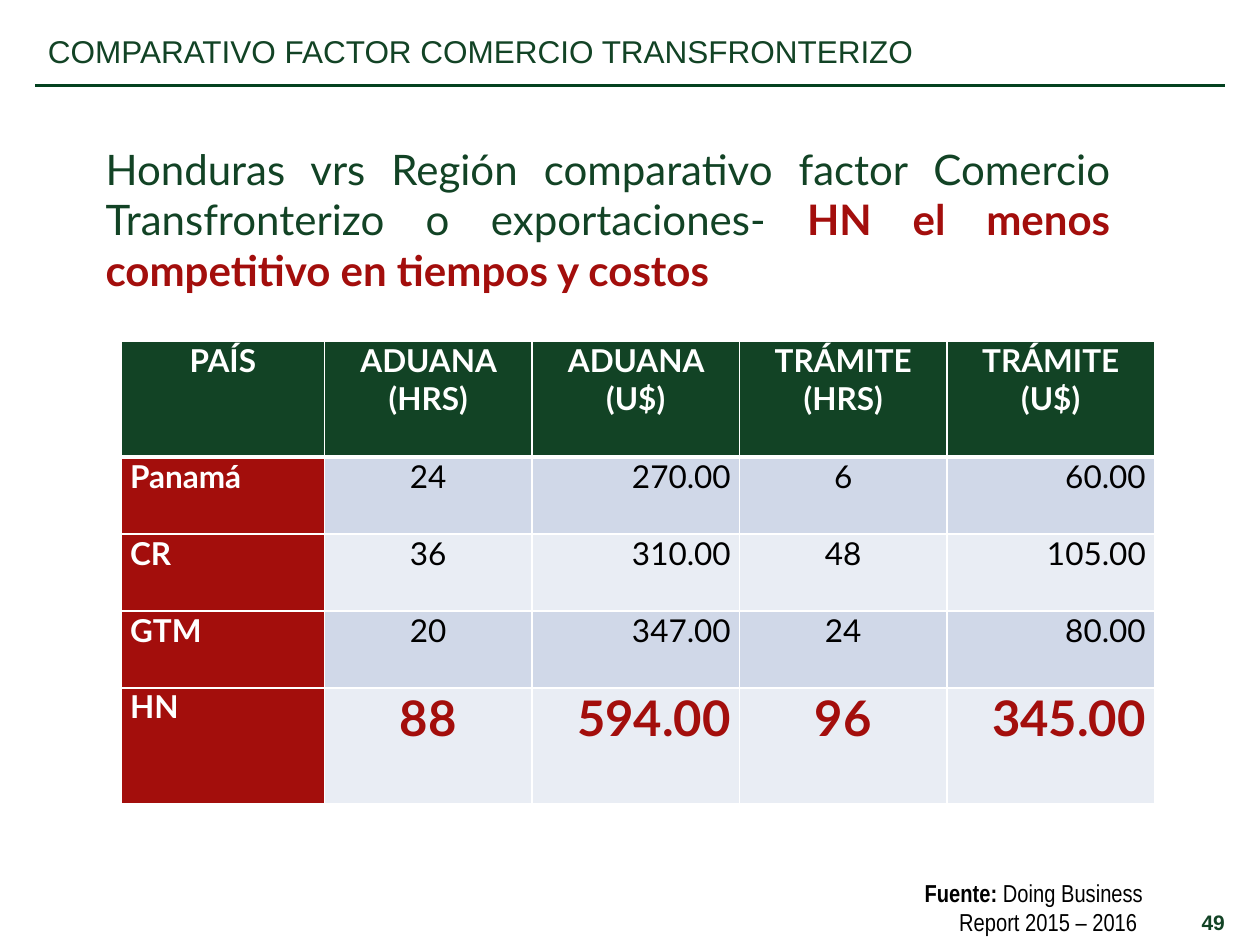
from dataclasses import dataclass

from lxml import etree
from pptx import Presentation
from pptx.dml.color import RGBColor
from pptx.enum.shapes import MSO_CONNECTOR
from pptx.enum.text import MSO_ANCHOR, MSO_AUTO_SIZE, PP_ALIGN
from pptx.oxml.ns import qn
from pptx.util import Pt

LEFT, CENTER, RIGHT, JUSTIFY = PP_ALIGN.LEFT, PP_ALIGN.CENTER, PP_ALIGN.RIGHT, PP_ALIGN.JUSTIFY
TOP, MIDDLE = MSO_ANCHOR.TOP, MSO_ANCHOR.MIDDLE
NO_AUTOFIT = MSO_AUTO_SIZE.NONE
STRAIGHT = MSO_CONNECTOR.STRAIGHT


@dataclass(frozen=True)
class Theme:
    green: str = "124325"
    rule: str = "03411F"
    red: str = "A30E0C"
    white: str = "FFFFFF"
    black: str = "000000"
    bands: tuple[str, str] = ("D0D8E8", "E9EDF4")
    heading_font: str = "Arial"
    body_font: str = "Lato"
    source_font: str = "Arial Narrow"
    heading_size: float = 18
    statement_size: float = 24
    table_size: float = 18
    highlight_size: float = 28
    source_size: float = 14
    number_size: float = 12


@dataclass(frozen=True)
class Box:
    left: float
    top: float
    width: float
    height: float

    def lengths(self) -> tuple[Pt, Pt, Pt, Pt]:
        return Pt(self.left), Pt(self.top), Pt(self.width), Pt(self.height)


@dataclass(frozen=True)
class Country:
    name: str
    values: tuple[str, str, str, str]
    highlighted: bool = False


THEME = Theme()
HEADERS = ("PAÍS", "ADUANA (HRS)", "ADUANA (U$)", "TRÁMITE (HRS)", "TRÁMITE (U$)")
COUNTRIES = (
    Country("Panamá", ("24", "270.00", "6", "60.00")),
    Country("CR", ("36", "310.00", "48", "105.00")),
    Country("GTM", ("20", "347.00", "24", "80.00")),
    Country("HN", ("88", "594.00", "96", "345.00"), highlighted=True),
)
COLUMN_WIDTHS = (116, 118.6, 118.6, 118.6, 118.6)
ROW_HEIGHTS = (66, 44, 44, 44, 66)
VALUE_ALIGNMENTS = (CENTER, RIGHT, CENTER, RIGHT)


def add_run(paragraph, text: str, *, font: str, size: float, color: str, bold: bool = False) -> None:
    run = paragraph.add_run()
    run.text = text
    run.font.name = font
    run.font.size = Pt(size)
    run.font.bold = bold
    run.font.color.rgb = RGBColor.from_string(color)


def add_text_box(slide, box: Box, alignment, anchor=TOP):
    frame = slide.shapes.add_textbox(*box.lengths()).text_frame
    frame.word_wrap = True
    frame.vertical_anchor = anchor
    paragraph = frame.paragraphs[0]
    paragraph.alignment = alignment
    return paragraph


def add_title(slide, text: str) -> None:
    title = slide.shapes.title
    title.left, title.top, title.width, title.height = Box(20.2, 15.1, 612.7, 27.4).lengths()
    frame = title.text_frame
    frame.auto_size = NO_AUTOFIT
    frame.vertical_anchor = MIDDLE
    paragraph = frame.paragraphs[0]
    paragraph.alignment = LEFT
    add_run(paragraph, text, font=THEME.heading_font, size=THEME.heading_size, color=THEME.green)


def add_rule(slide) -> None:
    rule = slide.shapes.add_connector(STRAIGHT, Pt(20.2), Pt(49), Pt(699.8), Pt(49))
    rule.line.color.rgb = RGBColor.from_string(THEME.rule)
    rule.line.width = Pt(2)
    etree.SubElement(rule._element.spPr, qn("a:effectLst"))


def add_borders(cell, bottom_width: float) -> None:
    properties = cell._tc.get_or_add_tcPr()
    widths = {"a:lnL": 1, "a:lnR": 1, "a:lnT": 1, "a:lnB": bottom_width}
    for position, (tag, width) in enumerate(widths.items()):
        line = etree.Element(qn(tag), w=str(Pt(width)))
        fill = etree.SubElement(line, qn("a:solidFill"))
        etree.SubElement(fill, qn("a:srgbClr"), val=THEME.white)
        properties.insert(position, line)


def fill_cell(cell, text: str, *, fill: str, color: str, alignment,
              size: float = THEME.table_size, bold: bool = False, bottom_width: float = 1) -> None:
    cell.margin_left = cell.margin_right = Pt(5)
    cell.margin_top = cell.margin_bottom = 0
    cell.vertical_anchor = TOP
    cell.fill.solid()
    cell.fill.fore_color.rgb = RGBColor.from_string(fill)
    add_borders(cell, bottom_width)
    paragraph = cell.text_frame.paragraphs[0]
    paragraph.alignment = alignment
    add_run(paragraph, text, font=THEME.body_font, size=size, color=color, bold=bold)


def add_comparison_table(slide) -> None:
    box = Box(69.4, 195.1, sum(COLUMN_WIDTHS), sum(ROW_HEIGHTS))
    table = slide.shapes.add_table(len(ROW_HEIGHTS), len(COLUMN_WIDTHS), *box.lengths()).table
    for column, width in zip(table.columns, COLUMN_WIDTHS):
        column.width = Pt(width)
    for row, height in zip(table.rows, ROW_HEIGHTS):
        row.height = Pt(height)
    for column_index, header in enumerate(HEADERS):
        fill_cell(table.cell(0, column_index), header, fill=THEME.green, color=THEME.white,
                  alignment=CENTER, bold=True, bottom_width=3)
    for row_index, country in enumerate(COUNTRIES, start=1):
        fill_cell(table.cell(row_index, 0), country.name, fill=THEME.red, color=THEME.white,
                  alignment=LEFT, bold=True)
        band = THEME.bands[(row_index - 1) % 2]
        color = THEME.red if country.highlighted else THEME.black
        size = THEME.highlight_size if country.highlighted else THEME.table_size
        for column_index, (value, alignment) in enumerate(zip(country.values, VALUE_ALIGNMENTS), start=1):
            fill_cell(table.cell(row_index, column_index), value, fill=band, color=color,
                      alignment=alignment, size=size, bold=country.highlighted)


def add_statement(slide) -> None:
    paragraph = add_text_box(slide, Box(53.3, 78.5, 588.2, 94.3), JUSTIFY)
    add_run(paragraph, "Honduras vrs Región comparativo factor Comercio Transfronterizo o exportaciones- ",
            font=THEME.body_font, size=THEME.statement_size, color=THEME.green)
    add_run(paragraph, "HN el menos competitivo en tiempos y costos",
            font=THEME.body_font, size=THEME.statement_size, color=THEME.red, bold=True)


def add_source(slide) -> None:
    paragraph = add_text_box(slide, Box(507.6, 498.2, 152.6, 41), RIGHT)
    add_run(paragraph, "Fuente: ", font=THEME.source_font, size=THEME.source_size,
            color=THEME.black, bold=True)
    add_run(paragraph, "Doing Business Report 2015 – 2016 ", font=THEME.source_font,
            size=THEME.source_size, color=THEME.black)


def add_page_number(slide, number: str) -> None:
    paragraph = add_text_box(slide, Box(659.5, 518.4, 47.5, 17.3), RIGHT, MIDDLE)
    add_run(paragraph, number, font=THEME.heading_font, size=THEME.number_size,
            color=THEME.green, bold=True)


def main() -> None:
    presentation = Presentation()
    presentation.slide_width, presentation.slide_height = Pt(720), Pt(540)
    slide = presentation.slides.add_slide(presentation.slide_layouts[5])
    add_rule(slide)
    add_title(slide, "COMPARATIVO FACTOR COMERCIO TRANSFRONTERIZO")
    add_page_number(slide, "49")
    add_statement(slide)
    add_comparison_table(slide)
    add_source(slide)
    presentation.save("out.pptx")


if __name__ == "__main__":
    main()
